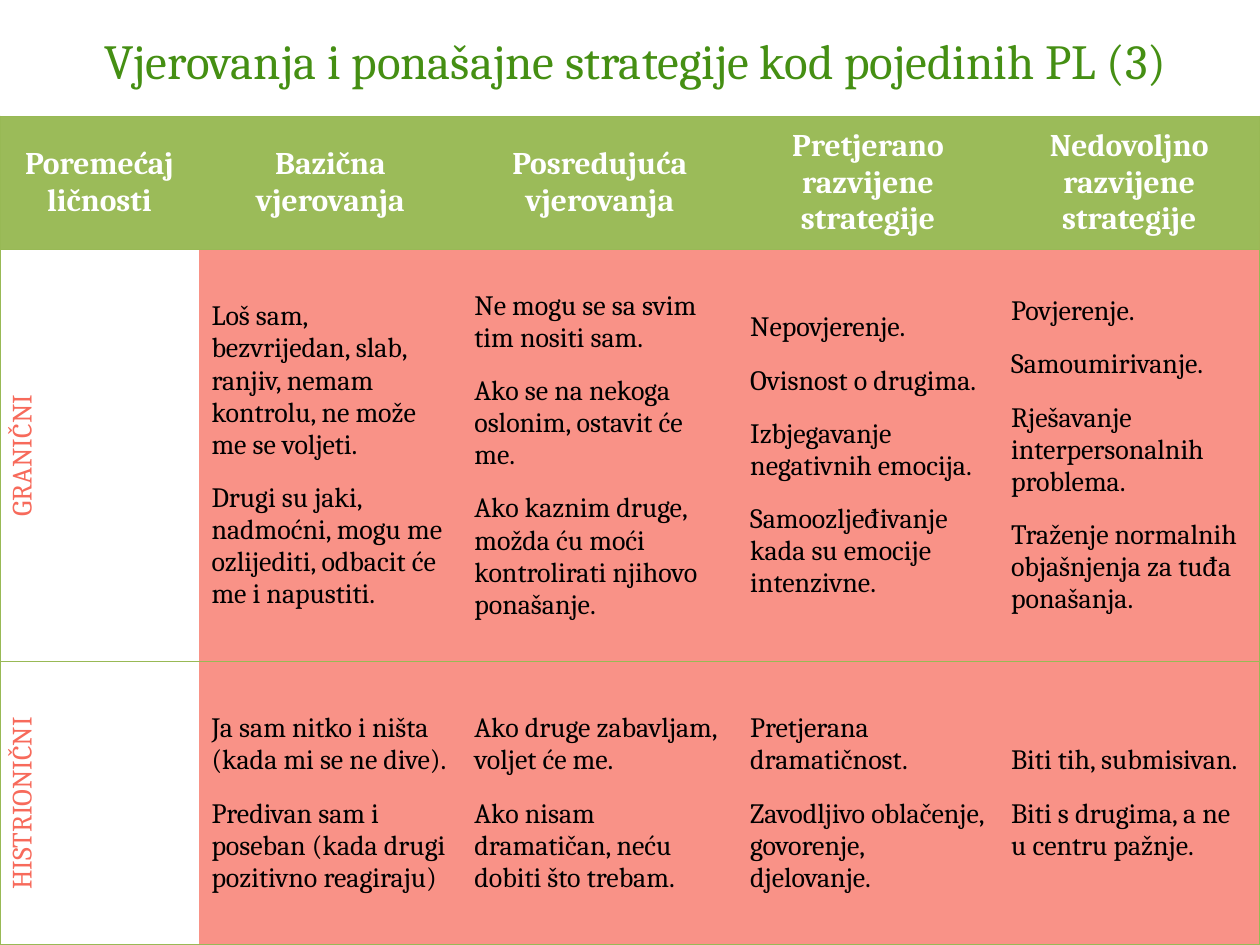
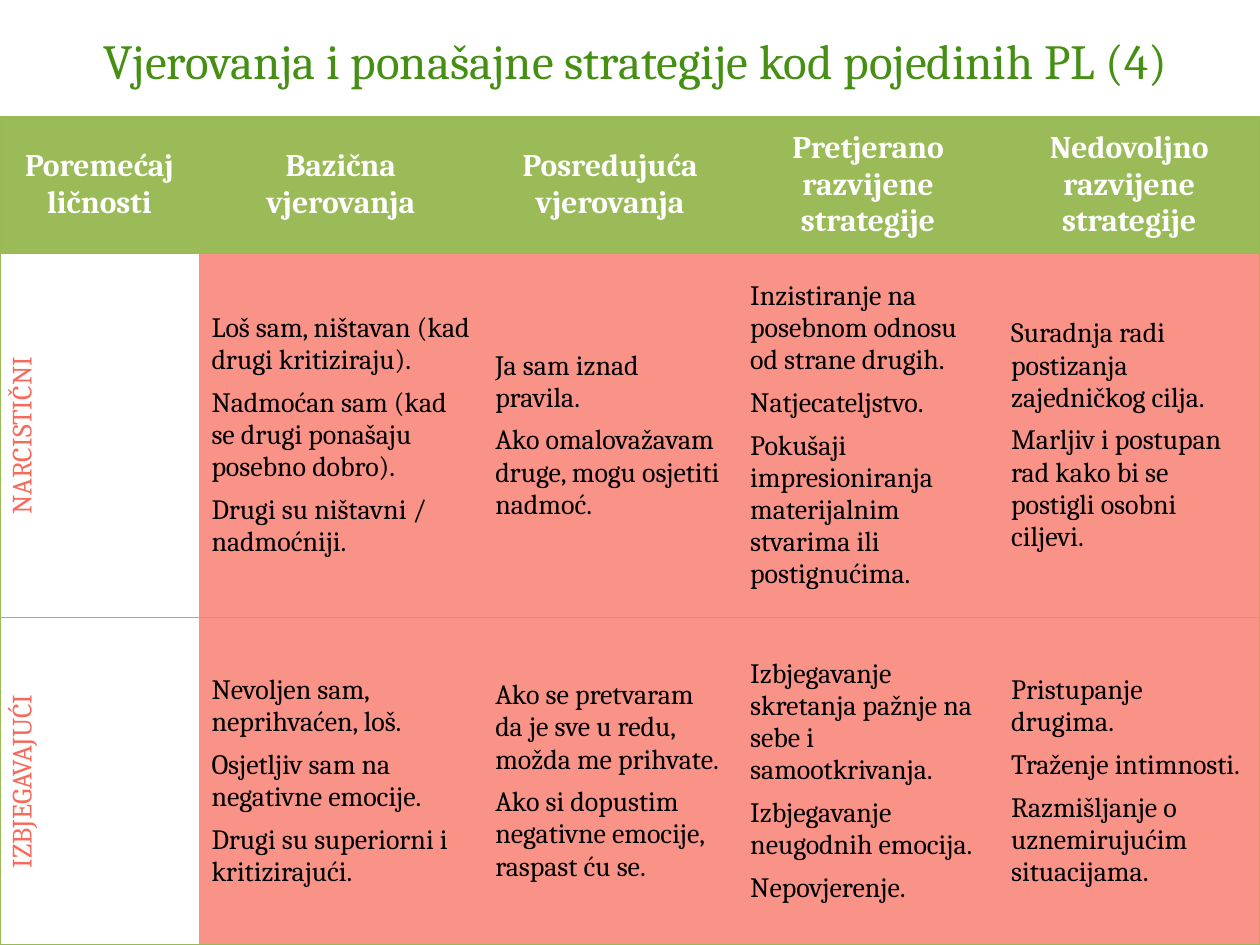
from dataclasses import dataclass

from lxml import etree
from pptx import Presentation
from pptx.dml.color import RGBColor
from pptx.enum.text import MSO_ANCHOR, MSO_AUTO_SIZE, PP_ALIGN
from pptx.oxml.ns import qn
from pptx.util import Cm, Pt

CENTER, LEFT = PP_ALIGN.CENTER, PP_ALIGN.LEFT
MIDDLE = MSO_ANCHOR.MIDDLE
NO_AUTOFIT = MSO_AUTO_SIZE.NONE
PLAIN_TABLE = "{2D5ABB26-0587-4C30-8999-92F81FD0307C}"


@dataclass(frozen=True)
class Theme:
    font: str = "Cambria"
    title: str = "458F13"
    header: str = "9BBB59"
    border: str = "98B955"
    belief: str = "F99287"
    disorder: str = "F76A5B"
    white: str = "FFFFFF"
    black: str = "000000"
    title_size: int = 28
    header_size: int = 18
    body_size: int = 16
    border_width: float = 0.75


THEME = Theme()

TITLE = "Vjerovanja i ponašajne strategije kod pojedinih PL ({})"
HEADERS = [
    "Poremećaj ličnosti",
    "Bazična vjerovanja",
    "Posredujuća vjerovanja",
    "Pretjerano razvijene strategije",
    "Nedovoljno razvijene strategije",
]
PARTS = [
    {
        "number": 3,
        "columns": [4.01, 5.30, 5.56, 5.26, 5.27],
        "rows": [2.69, 8.31, 5.71],
        "gap": 12,
        "disorders": [
            ("GRANIČNI", [
                ["Loš sam, bezvrijedan, slab, ranjiv, nemam kontrolu, ne može me se voljeti.",
                 "Drugi su jaki, nadmoćni, mogu me ozlijediti, odbacit će me i napustiti."],
                ["Ne mogu se sa svim tim nositi sam.",
                 "Ako se na nekoga oslonim, ostavit će me.",
                 "Ako kaznim druge, možda ću moći kontrolirati njihovo ponašanje."],
                ["Nepovjerenje.",
                 "Ovisnost o drugima.",
                 "Izbjegavanje negativnih emocija.",
                 "Samoozljeđivanje kada su emocije intenzivne."],
                ["Povjerenje.",
                 "Samoumirivanje.",
                 "Rješavanje interpersonalnih problema.",
                 "Traženje normalnih objašnjenja za tuđa ponašanja."],
            ]),
            ("HISTRIONIČNI", [
                ["Ja sam nitko i ništa (kada mi se ne dive).",
                 "Predivan sam i poseban (kada drugi pozitivno reagiraju)"],
                ["Ako druge zabavljam, voljet će me.",
                 "Ako nisam dramatičan, neću dobiti što trebam."],
                ["Pretjerana dramatičnost.",
                 "Zavodljivo oblačenje, govorenje, djelovanje."],
                ["Biti tih, submisivan.",
                 "Biti s drugima, a ne u centru pažnje."],
            ]),
        ],
    },
    {
        "number": 4,
        "columns": [4.01, 5.72, 5.14, 5.26, 5.27],
        "rows": [2.77, 7.34, 6.60],
        "gap": 6,
        "disorders": [
            ("NARCISTIČNI", [
                ["Loš sam, ništavan (kad drugi kritiziraju).",
                 "Nadmoćan sam (kad se drugi ponašaju posebno dobro).",
                 "Drugi su ništavni / nadmoćniji."],
                ["Ja sam iznad pravila.",
                 "Ako omalovažavam druge, mogu osjetiti nadmoć."],
                ["Inzistiranje na posebnom odnosu od strane drugih.",
                 "Natjecateljstvo.",
                 "Pokušaji impresioniranja materijalnim stvarima ili postignućima."],
                ["Suradnja radi postizanja zajedničkog cilja.",
                 "Marljiv i postupan rad kako bi se postigli osobni ciljevi."],
            ]),
            ("IZBJEGAVAJUĆI", [
                ["Nevoljen sam, neprihvaćen, loš.",
                 "Osjetljiv sam na negativne emocije.",
                 "Drugi su superiorni i kritizirajući."],
                ["Ako se pretvaram da je sve u redu, možda me prihvate.",
                 "Ako si dopustim negativne emocije, raspast ću se."],
                ["Izbjegavanje skretanja pažnje na sebe i samootkrivanja.",
                 "Izbjegavanje neugodnih emocija.",
                 "Nepovjerenje."],
                ["Pristupanje drugima.",
                 "Traženje intimnosti.",
                 "Razmišljanje o uznemirujućim situacijama."],
            ]),
        ],
    },
]


def write(frame, texts, size, color, align=LEFT, bold=False, gap=0):
    for index, text in enumerate(texts):
        paragraph = frame.paragraphs[0] if index == 0 else frame.add_paragraph()
        paragraph.alignment = align
        paragraph.space_before = Pt(gap if index else 0)
        run = paragraph.add_run()
        run.text = text
        run.font.name = THEME.font
        run.font.size = Pt(size)
        run.font.bold = bold
        run.font.color.rgb = RGBColor.from_string(color)


def add_borders(cell, sides):
    properties = cell._tc.get_or_add_tcPr()
    for side in sides:
        line = etree.SubElement(properties, qn(f"a:ln{side}"), w=str(Pt(THEME.border_width)))
        fill = etree.SubElement(line, qn("a:solidFill"))
        etree.SubElement(fill, qn("a:srgbClr"), val=THEME.border)


def format_cell(cell, row, column, last_column, fill):
    edges = {"L": column == 0, "R": column == last_column, "T": row < 2, "B": row > 0}
    add_borders(cell, [side for side, drawn in edges.items() if drawn])
    cell.fill.solid()
    cell.fill.fore_color.rgb = RGBColor.from_string(fill)
    cell.vertical_anchor = MIDDLE


def add_title(slide, number):
    title = slide.shapes.title
    title.left, title.top, title.width, title.height = Cm(0.64), Cm(0.43), Cm(24.33), Cm(1.57)
    title.text_frame.auto_size = NO_AUTOFIT
    title.text_frame.vertical_anchor = MIDDLE
    write(title.text_frame, [TITLE.format(number)], THEME.title_size, THEME.title, CENTER)


def add_strategies(slide, part):
    widths, heights = part["columns"], part["rows"]
    table = slide.shapes.add_table(
        len(heights), len(widths), Cm(0), Cm(2.34), Cm(sum(widths)), Cm(sum(heights))
    ).table
    table.horz_banding = False
    table._tbl.tblPr.find(qn("a:tableStyleId")).text = PLAIN_TABLE
    for column, width in zip(table.columns, widths):
        column.width = Cm(width)
    for row, height in zip(table.rows, heights):
        row.height = Cm(height)

    last = len(widths) - 1
    for column, header in enumerate(HEADERS):
        cell = table.cell(0, column)
        format_cell(cell, 0, column, last, THEME.header)
        write(cell.text_frame, [header], THEME.header_size, THEME.white, CENTER, bold=True)

    for row, (disorder, beliefs) in enumerate(part["disorders"], 1):
        label = table.cell(row, 0)
        format_cell(label, row, 0, last, THEME.white)
        label._tc.get_or_add_tcPr().set("vert", "vert270")
        write(label.text_frame, [disorder], THEME.body_size, THEME.disorder, CENTER)
        for column, statements in enumerate(beliefs, 1):
            cell = table.cell(row, column)
            format_cell(cell, row, column, last, THEME.belief)
            write(cell.text_frame, statements, THEME.body_size, THEME.black, gap=part["gap"])


def main():
    deck = Presentation()
    deck.slide_width, deck.slide_height = Cm(25.4), Cm(19.05)
    title_only = deck.slide_layouts[5]
    for part in PARTS:
        slide = deck.slides.add_slide(title_only)
        add_strategies(slide, part)
        add_title(slide, part["number"])
    deck.save("out.pptx")


if __name__ == "__main__":
    main()
